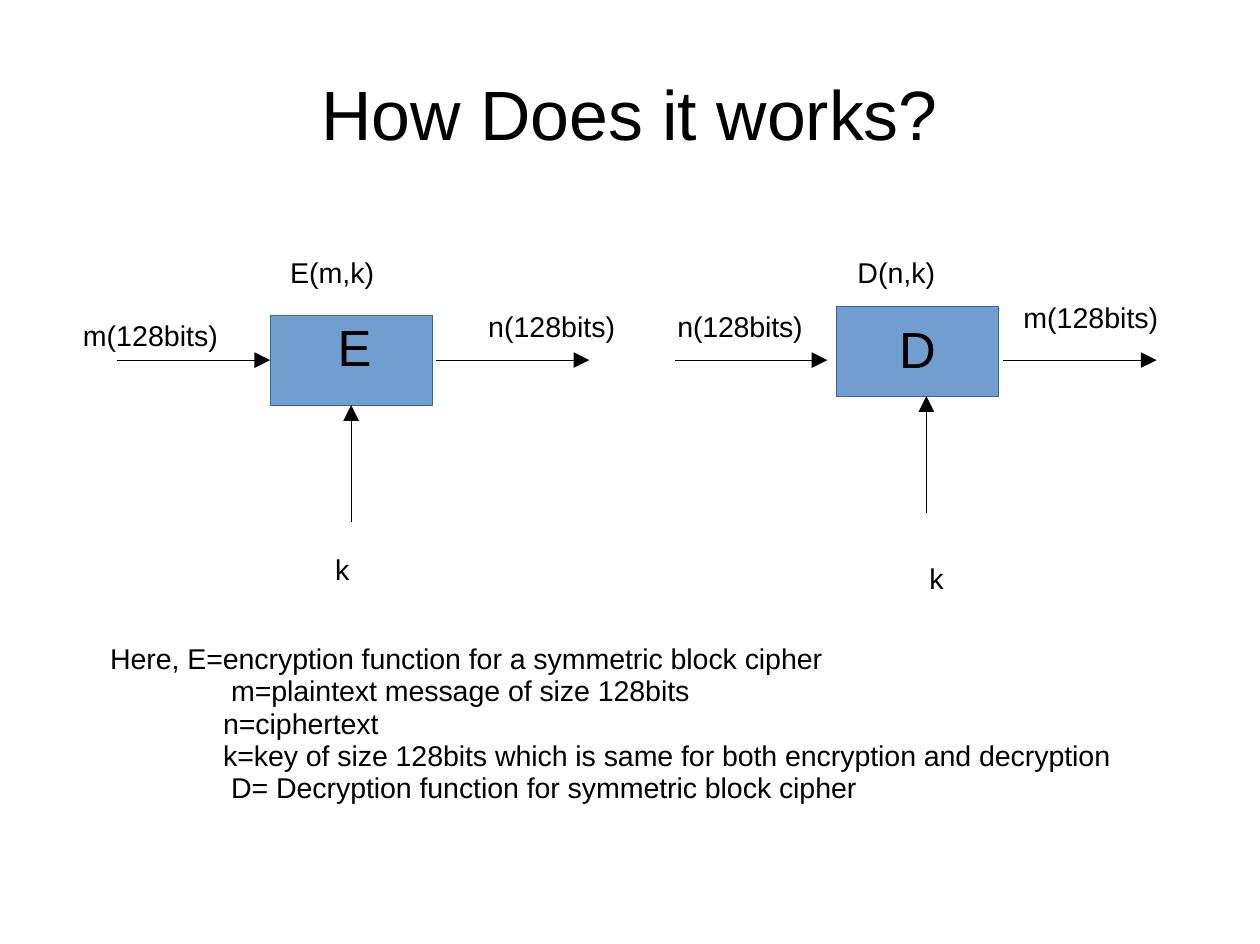
from pptx import Presentation
from pptx.dml.color import RGBColor
from pptx.enum.shapes import MSO_CONNECTOR, MSO_SHAPE
from pptx.enum.text import MSO_ANCHOR, MSO_AUTO_SIZE, PP_ALIGN
from pptx.oxml.ns import qn
from pptx.util import Pt
from lxml.etree import SubElement

PX = 8007
BLACK = RGBColor(0x00, 0x00, 0x00)
BLUE = RGBColor(0x71, 0x9E, 0xCE)
EDGE = RGBColor(0x33, 0x64, 0xA3)

deck = Presentation()
deck.slide_width = Pt(794)
deck.slide_height = Pt(595)
slide = deck.slides.add_slide(deck.slide_layouts[5])
shapes = slide.shapes


def write(shape, *lines, size=18, align=PP_ALIGN.LEFT, left=0, top=0,
          gap=0, pitch=None, dents=()):
    frame = shape.text_frame
    frame.word_wrap = True
    frame.auto_size = MSO_AUTO_SIZE.NONE
    frame.vertical_anchor = MSO_ANCHOR.TOP
    frame.margin_left, frame.margin_top = left * PX, top * PX
    frame.margin_right = frame.margin_bottom = 0
    for i, line in enumerate(lines):
        para = frame.paragraphs[0] if i == 0 else frame.add_paragraph()
        para.alignment = align
        if pitch:
            para.line_spacing = Pt(pitch)
        if dents:
            para._p.get_or_add_pPr().set("marL", str(dents[i] * PX))
        run = para.add_run()
        run.text = line
        run.font.name = "Arial"
        run.font.size = Pt(size)
        run.font.color.rgb = BLACK
        if gap:
            run._r.get_or_add_rPr().set("spc", str(gap))


def place(x, y, w, h):
    return [n * PX for n in (x, y, w, h)]


title = shapes.title
title.left, title.top, title.width, title.height = place(321, 71, 640, 87)
write(title, "How Does it works?", size=44)

blocks = {}
for name, x, y, left, top in [("E", 270, 315, 7, 1), ("D", 836, 306, 0, 12)]:
    block = shapes.add_shape(MSO_SHAPE.RECTANGLE, *place(x, y, 162, 90))
    block.shadow.inherit = False
    block.fill.solid()
    block.fill.fore_color.rgb = BLUE
    block.line.color.rgb = EDGE
    block.line.width = Pt(0.25)
    write(block, name, size=32, align=PP_ALIGN.CENTER, left=left, top=top)
    blocks[name] = block

arrows = [
    (117, 360, 270, 360, 1),
    (436, 360, 589, 360, None),
    (675, 360, 827, 360, None),
    (1003, 360, 1156, 360, None),
    (351, 522, 351, 405, 2),
    (926, 513, 926, 396, None),
]
for *ends, site in arrows:
    arrow = shapes.add_connector(MSO_CONNECTOR.STRAIGHT, *place(*ends))
    arrow.line.color.rgb = BLACK
    arrow.line.width = Pt(0.25)
    SubElement(arrow.line._get_or_add_ln(), qn("a:tailEnd"),
               type="triangle", w="lg", len="lg")
    SubElement(arrow._element.spPr, qn("a:effectLst"))
    if site:
        arrow.end_connect(blocks["E"], site)

labels = [
    ("m(128bits)", 83, 318, 0),
    ("m(128bits)", 1023, 300, 0),
    ("k", 335, 552, 0),
    ("k", 929, 561, 0),
    ("E(m,k)", 290, 255, 0),
    ("D(n,k)", 857, 255, 0),
    ("n(128bits)", 488, 309, 0),
    ("n(128bits)", 677, 309, -10),
]
for text, x, y, gap in labels:
    label = shapes.add_textbox(*place(x, y, 14 * len(text) + 2, 36))
    write(label, text, gap=gap)

legend = shapes.add_textbox(*place(110, 643, 1040, 164))
write(legend,
      "Here, E=encryption function for a symmetric block cipher",
      "m=plaintext message of size 128bits",
      "n=ciphertext",
      "k=key of size 128bits which is same for both encryption and decryption",
      "D= Decryption function for symmetric block cipher",
      gap=-5, pitch=20.3, dents=(0, 121, 113, 113, 121))

deck.save("out.pptx")
